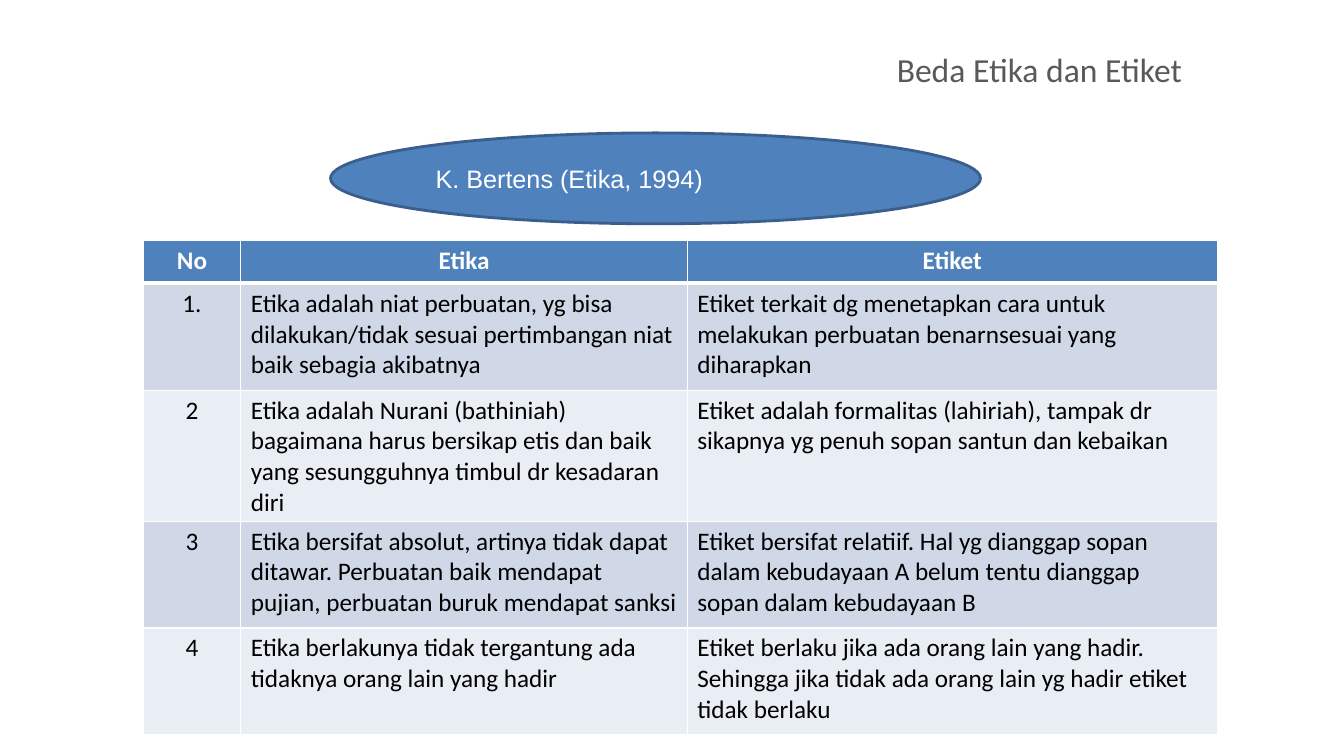
from dataclasses import dataclass

from lxml.etree import SubElement
from pptx import Presentation
from pptx.dml.color import RGBColor
from pptx.enum.shapes import MSO_SHAPE
from pptx.enum.text import MSO_ANCHOR, PP_ALIGN
from pptx.oxml.ns import qn
from pptx.slide import Slide
from pptx.table import _Cell
from pptx.text.text import TextFrame
from pptx.util import Cm, Pt

BLUE = "4F81BD"
WHITE = "FFFFFF"
BLACK = "000000"
BANDS = ("D0D8E8", "E9EDF4")
COLUMN_WIDTHS = (2.46, 11.25, 13.36)
HEADER_HEIGHT = 1.07
BODY_HEIGHT = 2.69


@dataclass
class Style:
    size: int
    color: str
    name: str = "Calibri"
    bold: bool = False
    align: PP_ALIGN = PP_ALIGN.LEFT


@dataclass
class Area:
    left: float
    top: float
    width: float
    height: float

    def lengths(self) -> tuple[Cm, ...]:
        return tuple(map(Cm, (self.left, self.top, self.width, self.height)))


@dataclass
class Difference:
    number: str
    ethics: str
    etiquette: str

    def texts(self) -> tuple[str, str, str]:
        return self.number, self.ethics, self.etiquette


HEADER = Difference("No", "Etika", "Etiket")
DIFFERENCES = [
    Difference(
        "1.",
        "Etika adalah niat perbuatan, yg bisa dilakukan/tidak sesuai pertimbangan niat baik sebagia akibatnya",
        "Etiket terkait dg menetapkan cara untuk melakukan perbuatan benarnsesuai yang diharapkan",
    ),
    Difference(
        "2",
        "Etika adalah Nurani (bathiniah) bagaimana harus bersikap etis dan baik yang sesungguhnya timbul dr kesadaran diri",
        "Etiket adalah formalitas (lahiriah), tampak dr sikapnya yg penuh sopan santun dan kebaikan",
    ),
    Difference(
        "3",
        "Etika bersifat absolut, artinya tidak dapat ditawar. Perbuatan baik mendapat pujian, perbuatan buruk mendapat sanksi",
        "Etiket bersifat relatiif. Hal yg dianggap sopan dalam kebudayaan A belum tentu dianggap sopan dalam kebudayaan B",
    ),
    Difference(
        "4",
        "Etika berlakunya tidak tergantung ada tidaknya orang lain yang hadir",
        "Etiket berlaku jika ada orang lain yang hadir. Sehingga jika tidak ada orang lain yg hadir etiket tidak berlaku",
    ),
]


def rgb(color: str) -> RGBColor:
    return RGBColor.from_string(color)


def write(frame: TextFrame, text: str, style: Style) -> None:
    frame.word_wrap = True
    para = frame.paragraphs[0]
    para.alignment = style.align
    span = para.add_run()
    span.text = text
    formats = {"name": style.name, "size": Pt(style.size), "bold": style.bold}
    for attribute, value in formats.items():
        setattr(span.font, attribute, value)
    span.font.color.rgb = rgb(style.color)


def add_borders(cell: _Cell, widths: dict[str, int]) -> None:
    properties = cell._tc.get_or_add_tcPr()
    for side, width in widths.items():
        line = SubElement(properties, qn(f"a:ln{side}"), w=str(Pt(width)))
        fill = SubElement(line, qn("a:solidFill"))
        SubElement(fill, qn("a:srgbClr"), val=WHITE)


def add_title(page: Slide, area: Area, text: str) -> None:
    box = page.shapes.add_textbox(*area.lengths())
    write(box.text_frame, text, Style(24, "595959"))


def add_source(page: Slide, area: Area, text: str) -> None:
    ellipse = page.shapes.add_shape(MSO_SHAPE.OVAL, *area.lengths())
    ellipse.shadow.inherit = False
    ellipse.fill.solid()
    ellipse.fill.fore_color.rgb = rgb(BLUE)
    ellipse.line.color.rgb = rgb("3A5F8C")
    ellipse.line.width = Pt(2)
    ellipse.text_frame.vertical_anchor = MSO_ANCHOR.MIDDLE
    write(ellipse.text_frame, text, Style(18, WHITE, name="Arial"))


def add_comparison(page: Slide, left: float, top: float) -> None:
    entries = [HEADER, *DIFFERENCES]
    height = HEADER_HEIGHT + BODY_HEIGHT * len(DIFFERENCES)
    area = Area(left, top, sum(COLUMN_WIDTHS), height)
    table = page.shapes.add_table(len(entries), len(COLUMN_WIDTHS), *area.lengths()).table
    for column, width in zip(table.columns, COLUMN_WIDTHS):
        column.width = Cm(width)
    for row_index, entry in enumerate(entries):
        is_header = row_index == 0
        table.rows[row_index].height = Cm(HEADER_HEIGHT if is_header else BODY_HEIGHT)
        for column_index, text in enumerate(entry.texts()):
            cell = table.cell(row_index, column_index)
            top_width = 3 if row_index == 1 else 1
            bottom_width = 3 if is_header else 1
            add_borders(cell, {"L": 1, "R": 1, "T": top_width, "B": bottom_width})
            cell.fill.solid()
            cell.fill.fore_color.rgb = rgb(BLUE if is_header else BANDS[(row_index - 1) % 2])
            centered = is_header or column_index == 0
            style = Style(
                18,
                WHITE if is_header else BLACK,
                bold=is_header,
                align=PP_ALIGN.CENTER if centered else PP_ALIGN.LEFT,
            )
            write(cell.text_frame, text, style)


def main() -> None:
    deck = Presentation()
    deck.slide_width = Cm(33.87)
    deck.slide_height = Cm(19.05)
    page = deck.slides.add_slide(deck.slide_layouts[6])
    add_title(page, Area(22.35, 1.12, 9.25, 1.78), "Beda Etika dan Etiket")
    add_comparison(page, 3.61, 6.07)
    add_source(page, Area(8.33, 3.35, 16.38, 2.29), "K. Bertens (Etika, 1994)")
    deck.save("out.pptx")


if __name__ == "__main__":
    main()
